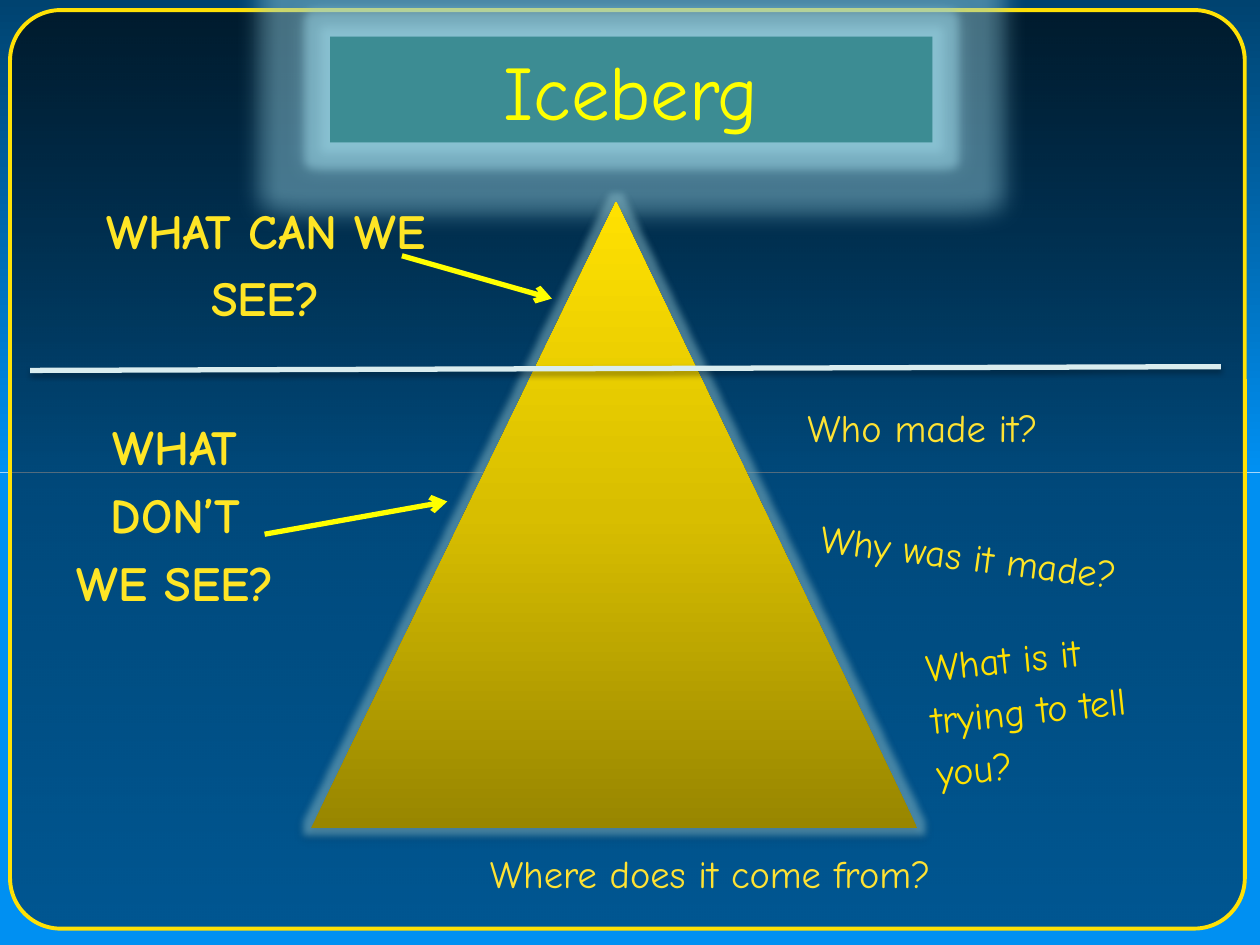
from lxml import etree
from pptx import Presentation
from pptx.dml.color import RGBColor
from pptx.enum import shapes, text
from pptx.oxml.ns import qn
from pptx.util import Inches, Pt

# The grid has 100 columns and 75 rows
COLS, ROWS = 100, 75
CELL = Inches(10) / COLS
FONT = "Comic Neue"
INK = {
    "deep": "004370", "sea": "0090F2", "black": "000000", "edge": "FFE105",
    "teal": "3C8C93", "glow": "93CDDD", "lemon": "FFFF00", "foam": "DAEDEF",
    "dark": "988600", "mid": "D8BE00", "gold": "FFE101",
    "ask": "FFE525", "note": "FFE233",
}
FORM = shapes.MSO_SHAPE


def rgb(name):
    return RGBColor.from_string(INK[name])


def cells(*nums):
    return [round(n * CELL) for n in nums]


def within(box, part):
    """Cells of a part whose left and top count from its box."""
    return cells(box[0] + part[0], box[1] + part[1], *part[2:])


def node(top, tag, **attrs):
    return etree.SubElement(top, qn("a:" + tag), {k: str(v) for k, v in attrs.items()})


def tint(top, name, alpha=100):
    clr = node(top, "srgbClr", val=INK[name])
    if alpha < 100:
        node(clr, "alpha", val=alpha * 1000)


def blend(shape, stops, angle):
    """Gradient from (place, colour, opacity) stops."""
    shape.fill.gradient()
    grad = shape._element.spPr.find(qn("a:gradFill"))
    for child in list(grad):
        grad.remove(child)
    row = node(grad, "gsLst")
    for pos, name, alpha in stops:
        tint(node(row, "gs", pos=pos * 1000), name, alpha)
    node(grad, "lin", ang=angle * 60000, scaled=0)


def effect(shape, glow=0, shade=False):
    """Replace the theme's effects with a halo, a drop shadow or nothing."""
    props = shape._element.spPr
    for old in props.findall(qn("a:effectLst")):
        props.remove(old)
    fx = node(props, "effectLst")
    if glow:
        tint(node(fx, "glow", rad=Pt(glow)), "glow", 48)
    if shade:
        drop = node(fx, "outerShdw", blurRad=Pt(3.1), dist=Pt(1.8),
                    dir=90 * 60000, rotWithShape=0)
        tint(drop, "black", 35)


def form(slide, kind, spot, fill=None):
    shape = slide.shapes.add_shape(kind, *spot)
    shape.shadow.inherit = False
    shape.line.fill.background()
    if fill:
        shape.fill.solid()
        shape.fill.fore_color.rgb = rgb(fill)
    return shape


def style(para, size, ink, bold=False):
    font = para.runs[0].font
    font.name, font.size, font.bold = FONT, Pt(size), bold
    font.color.rgb = rgb(ink)


def rule(slide, box, start, end, ink, arrow=False):
    line = slide.shapes.add_connector(
        shapes.MSO_CONNECTOR.STRAIGHT, *within(box, start), *within(box, end))
    line.line.width = Pt(3)
    line.line.color.rgb = rgb(ink)
    if arrow:
        node(line.line._get_or_add_ln(), "tailEnd", type="arrow")
    effect(line, shade=not arrow)


def label(slide, spot, words, size, ink, bold=False, turn=0):
    area = slide.shapes.add_textbox(*spot)
    area.rotation = turn
    frame = area.text_frame
    frame.word_wrap = True
    frame.text = words
    para = frame.paragraphs[0]
    para.line_spacing, para.space_after = 1.15, Pt(10)
    para.alignment = text.PP_ALIGN.CENTER if bold else text.PP_ALIGN.LEFT
    style(para, size, ink, bold)


def sea(slide, box):
    # Water in two halves, under a shaded panel
    half = box[3] / 2
    top = form(slide, FORM.RECTANGLE, within(box, (0, 0, box[2], half)))
    blend(top, [(0, "deep", 100), (100, "sea", 100)], 90)
    form(slide, FORM.RECTANGLE, within(box, (0, half, box[2], half)), "sea")
    panel = form(slide, FORM.ROUNDED_RECTANGLE, within(box, (0.8, 0.8, 98, 72.9)))
    panel.adjustments[0] = 0.055
    blend(panel, [(0, "black", 60), (100, "black", 40)], 90)
    panel.line.color.rgb = rgb("edge")
    panel.line.width = Pt(2.25)


def head(slide, box):
    # Wide halo behind, narrow halo in front
    for glow in (27, 10):
        plate = form(slide, FORM.RECTANGLE, cells(*box), "teal")
        effect(plate, glow)
    frame = plate.text_frame
    frame.text = "Iceberg"
    frame.vertical_anchor = text.MSO_ANCHOR.MIDDLE
    frame.paragraphs[0].alignment = text.PP_ALIGN.CENTER
    style(frame.paragraphs[0], 44, "lemon")


def berg(slide, box):
    # Iceberg and the waterline across it
    peak = form(slide, FORM.ISOSCELES_TRIANGLE, cells(*box))
    peak.adjustments[0] = 0.503
    blend(peak, [(0, "dark", 100), (50, "mid", 100), (100, "gold", 100)], 270)
    effect(peak, glow=8, shade=True)
    rule(slide, box, (-22.3, 13.4), (72.2, 13.1), "foam")


def asks(slide, box):
    # Bold questions, each with an arrow to the iceberg
    for part, words, start, end in (
        ((2.2, 0, 29, 11.3), "WHAT CAN WE SEE?", (27.5, 5.6), (39.4, 9)),
        ((0, 17.2, 19, 15.7), "WHAT DON’T WE SEE?", (16.6, 27.7), (31.1, 25.1)),
    ):
        label(slide, within(box, part), words, 28, "ask", bold=True)
        rule(slide, box, start, end, "lemon", arrow=True)


def notes(slide, box):
    # Loose questions around the hidden part
    for part, words, ink, turn in (
        ((25.8, 10.5, 30.4, 11.9), "Why was it made?", "ask", 7.1),
        ((25.2, 0, 23.9, 6.5), "Who made it?", "note", 0),
        ((0, 35.4, 41.4, 6.5), "Where does it come from?", "note", 0),
        ((34.9, 18, 21.9, 13.2), "What is it trying to tell you?", "gold", -5.9),
    ):
        label(slide, within(box, part), words, 22, ink, turn=turn)


def main():
    deck = Presentation()
    deck.slide_width, deck.slide_height = cells(COLS, ROWS)
    slide = deck.slides.add_slide(deck.slide_layouts[6])
    sea(slide, (0, 0, COLS, ROWS))
    head(slide, (26.2, 2.9, 47.8, 8.4))
    berg(slide, (24.7, 16, 48.1, 49.7))
    asks(slide, (4.4, 14.7, 39.4, 32.9))
    notes(slide, (37.9, 31, 56.8, 41.9))
    deck.save("out.pptx")


if __name__ == "__main__":
    main()
